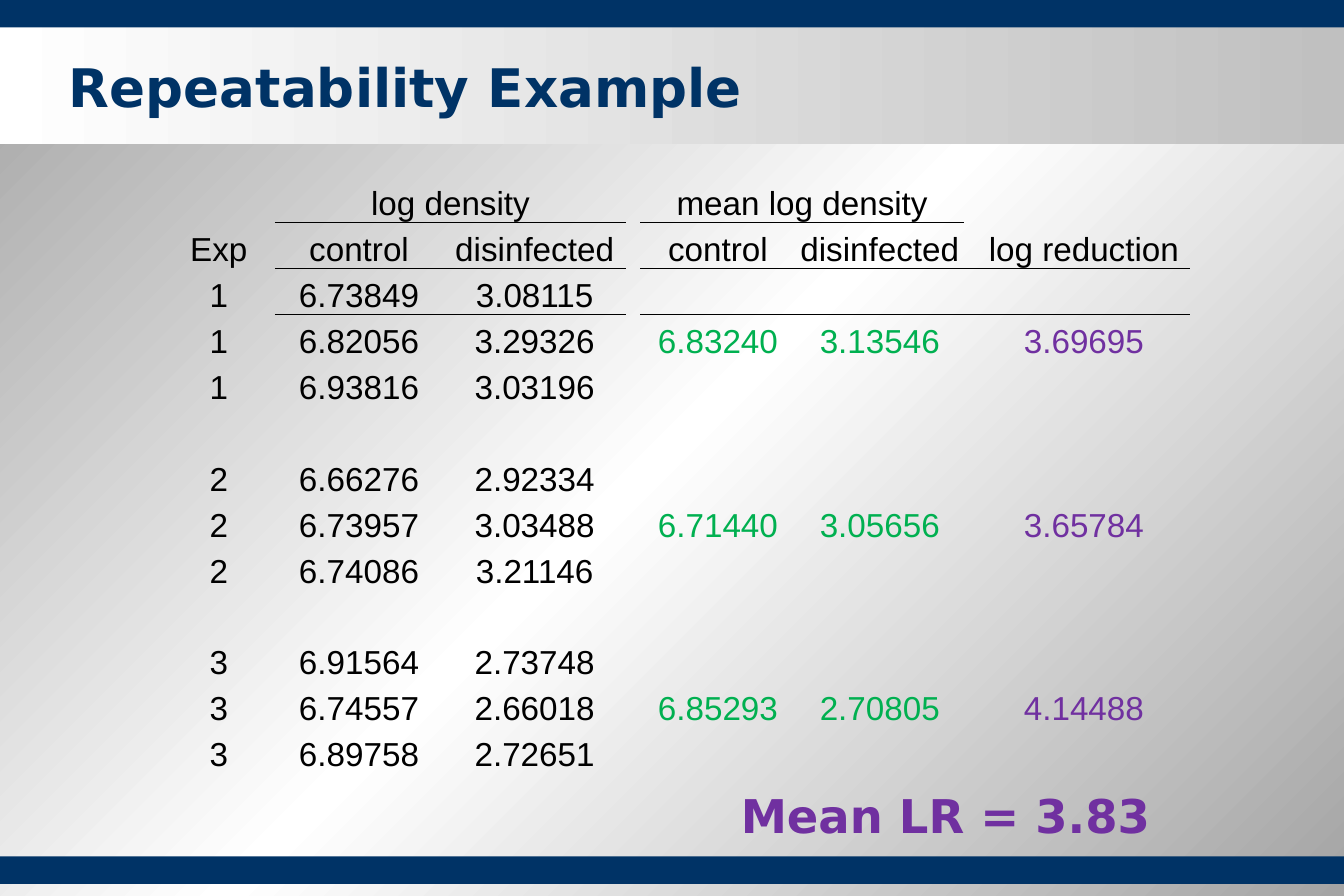
from lxml.etree import SubElement
from pptx import Presentation
from pptx.dml.color import RGBColor
from pptx.enum.shapes import MSO_SHAPE as SHAPE
from pptx.enum.text import MSO_ANCHOR as ANCHOR, PP_ALIGN as ALIGN
from pptx.oxml import parse_xml
from pptx.oxml.ns import nsdecls, qn
from pptx.util import Pt

NAVY, BLACK, GREEN, PURPLE = "003366", "000000", "00B050", "7030A0"
NO_STYLE = "{2D5ABB26-0587-4C30-8999-92F81FD0307C}"
HEADING = {"name": "DejaVu Sans", "bold": True}
BODY = {"name": "Arial", "size": Pt(20)}
CELL = {
    "margin_left": Pt(0.7), "margin_right": Pt(0.7), "margin_top": Pt(0.7),
    "margin_bottom": Pt(0), "vertical_anchor": ANCHOR.BOTTOM,
}
WIDTHS = [67.7, 101.5, 110.2, 8.6, 93.6, 101.5, 8.6, 127.4, 8.6]
ROW_HEIGHT = 27.69
COLUMN_COLOURS = {4: GREEN, 5: GREEN, 7: PURPLE}
HEADERS = [
    {1: "log density", 4: "mean log density"},
    {0: "Exp", 1: "control", 2: "disinfected", 4: "control",
     5: "disinfected", 7: "log reduction"},
]
RULES = [(1, (1, 2, 4, 5, 6, 7)), (0, (1, 2, 4, 5))]
EXPERIMENTS = [
    ([("6.73849", "3.08115"), ("6.82056", "3.29326"), ("6.93816", "3.03196")],
     ("6.83240", "3.13546", "3.69695")),
    ([("6.66276", "2.92334"), ("6.73957", "3.03488"), ("6.74086", "3.21146")],
     ("6.71440", "3.05656", "3.65784")),
    ([("6.91564", "2.73748"), ("6.74557", "2.66018"), ("6.89758", "2.72651")],
     ("6.85293", "2.70805", "4.14488")),
]


def rgb(colour):
    """Turn a hex string into a colour."""
    return RGBColor.from_string(colour)


def apply(target, values):
    """Set each named attribute on the target."""
    for name, value in values.items():
        setattr(target, name, value)


def style(font, values, colour):
    """Format a font and colour it."""
    apply(font, values)
    font.color.rgb = rgb(colour)


def gradient(owner, colours, angle):
    """Fill the owner with evenly spaced gradient stops."""
    owner.fill.gradient()
    owner.fill.gradient_angle = angle


def set_stops(element, colours):
    """Replace the first gradient's stops with evenly spaced colours."""
    stops = next(element.iter(qn("a:gsLst")))
    for stop in list(stops):
        stops.remove(stop)
    for i, colour in enumerate(colours):
        pos = str(100000 * i // (len(colours) - 1))
        stop = SubElement(stops, qn("a:gs"), pos=pos)
        SubElement(stop, qn("a:srgbClr"), val=colour)


def add_band(s, top, height, colours):
    """Add a full-width band, solid for one colour and graded for more."""
    sp = s.shapes.add_shape(SHAPE.RECTANGLE, 0, Pt(top), Pt(810), Pt(height))
    sp.shadow.inherit = False
    sp.line.fill.background()
    if len(colours) == 1:
        sp.fill.solid()
        sp.fill.fore_color.rgb = rgb(colours[0])
    else:
        gradient(sp, colours, 0)
        set_stops(sp.element, colours)


def add_heading(s, text, box, size, colour):
    """Add one line of bold heading text."""
    tf = s.shapes.add_textbox(*map(Pt, box)).text_frame
    tf.word_wrap = True
    r = tf.paragraphs[0].add_run()
    r.text = text
    style(r.font, {**HEADING, "size": Pt(size)}, colour)


def table_rows():
    """List the table rows as maps from column to text."""
    rows = list(HEADERS)
    for number, (densities, results) in enumerate(EXPERIMENTS, 1):
        if number > 1:
            rows.append({})
        for i, (control, disinfected) in enumerate(densities):
            row = {0: str(number), 1: control, 2: disinfected}
            if i == 1:
                row.update(zip(COLUMN_COLOURS, results))
            rows.append(row)
    return rows


def add_border(cell, side):
    """Draw a thin black line on one side of a cell."""
    line = parse_xml(
        f'<a:{side} {nsdecls("a")} w="6350"><a:solidFill>'
        f'<a:srgbClr val="{BLACK}"/></a:solidFill></a:{side}>')
    next(cell.iter(qn("a:tcPr"))).insert(0, line)


def add_density_table(s, left, top):
    """Add the table of log densities and reductions."""
    rows = table_rows()
    frame = s.shapes.add_table(
        len(rows), len(WIDTHS), Pt(left), Pt(top),
        Pt(sum(WIDTHS)), Pt(ROW_HEIGHT * len(rows)))
    next(frame.element.iter(qn("a:tableStyleId"))).text = NO_STYLE
    table = frame.table
    apply(table, {"first_row": False, "horz_banding": False})
    for column, width in zip(table.columns, WIDTHS):
        column.width = Pt(width)
    for y, row in enumerate(rows):
        table.rows[y].height = Pt(ROW_HEIGHT)
        for x in range(len(WIDTHS)):
            cell = table.cell(y, x)
            apply(cell, CELL)
            cell.fill.background()
            p = cell.text_frame.paragraphs[0]
            p.alignment = ALIGN.CENTER
            colour = BLACK if y < len(HEADERS) else COLUMN_COLOURS.get(x, BLACK)
            if x in row:
                r = p.add_run()
                r.text = row[x]
                style(r.font, BODY, colour)
    for x in HEADERS[0]:
        table.cell(0, x).merge(table.cell(0, x + 1))
    grid = [list(tr.iter(qn("a:tc"))) for tr in frame.element.iter(qn("a:tr"))]
    for y, columns in RULES:
        for x in columns:
            add_border(grid[y][x], "lnB")
            add_border(grid[y + 1][x], "lnT")


def main():
    """Build and save the slide."""
    prs = Presentation()
    apply(prs, {"slide_width": Pt(810), "slide_height": Pt(540)})
    s = prs.slides.add_slide(prs.slide_layouts[6])
    backdrop = ["A4A4A4", "FFFFFF", "A4A4A4"]
    gradient(s.background, backdrop, 315)
    set_stops(s.element, backdrop)
    add_band(s, 516.2, 16.6, [NAVY])
    add_band(s, 15, 72, ["FFFFFF", "C0C0C0"])
    add_heading(s, "Repeatability Example", (34.5, 29, 745, 46), 32, NAVY)
    add_band(s, 0, 16.6, [NAVY])
    add_density_table(s, 98, 106.6)
    add_heading(s, "Mean LR = 3.83", (439.4, 471, 275, 40), 28, PURPLE)
    prs.save("out.pptx")


if __name__ == "__main__":
    main()
